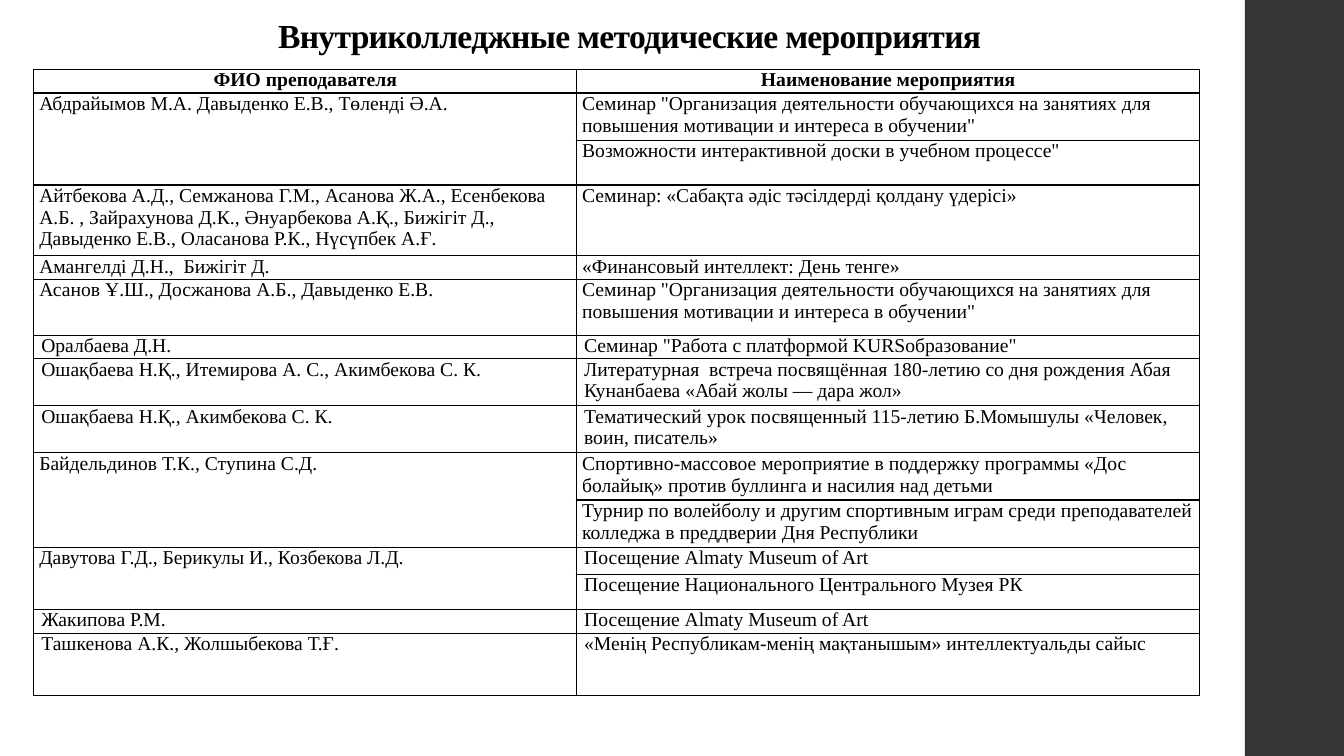
from typing import NamedTuple
from lxml import etree
from pptx import Presentation
from pptx import util as u
from pptx.dml.color import RGBColor
from pptx.enum import shapes, text
from pptx.oxml.ns import qn

HUES = {"ink": "000000", "paper": "FFFFFF", "bar": "353537"}
FACE = "Times New Roman"
SLIM, WIDE = 0.15, 0.2


class Row(NamedTuple):
    """One table row: height in cm, staff, event and left margins."""
    high: float
    staff: str
    event: str
    left: float = SLIM
    right: float = SLIM


ROWS = [
    Row(0.59, "ФИО преподавателя", "Наименование мероприятия"),
    Row(1.16, "Абдрайымов М.А. Давыденко Е.В., Төленді Ә.А.",
        "Семинар \"Организация деятельности обучающихся на занятиях для "
        "повышения мотивации и интереса в обучении\""),
    Row(1.13, "", "Возможности интерактивной доски в учебном процессе\""),
    Row(1.74, "Айтбекова А.Д., Семжанова Г.М., Асанова Ж.А., Есенбекова А.Б. , "
        "Зайрахунова Д.К., Әнуарбекова А.Қ., Бижігіт Д., Давыденко Е.В., "
        "Оласанова Р.К., Нүсүпбек А.Ғ.",
        "Семинар: «Сабақта әдіс тәсілдерді қолдану үдерісі»"),
    Row(0.59, "Амангелді Д.Н.,  Бижігіт Д.", "«Финансовый интеллект: День тенге»"),
    Row(1.41, "Асанов Ұ.Ш., Досжанова А.Б., Давыденко Е.В.",
        "Семинар \"Организация деятельности обучающихся на занятиях для "
        "повышения мотивации и интереса в обучении\""),
    Row(0.59, "Оралбаева Д.Н.", "Семинар \"Работа с платформой KURSобразование\"",
        WIDE, WIDE),
    Row(1.16, "Ошақбаева Н.Қ., Итемирова А. С., Акимбекова С. К.",
        "Литературная  встреча посвящённая 180-летию со дня рождения Абая "
        "Кунанбаева «Абай жолы — дара жол»", WIDE, WIDE),
    Row(1.16, "Ошақбаева Н.Қ., Акимбекова С. К.",
        "Тематический урок посвященный 115-летию Б.Момышулы «Человек, воин, "
        "писатель»", WIDE, WIDE),
    Row(1.16, "Байдельдинов Т.К., Ступина С.Д.",
        "Спортивно-массовое мероприятие в поддержку программы «Дос болайық» "
        "против буллинга и насилия над детьми"),
    Row(1.16, "", "Турнир по волейболу и другим спортивным играм среди "
        "преподавателей колледжа в преддверии Дня Республики"),
    Row(0.69, "Давутова Г.Д., Берикулы И., Козбекова Л.Д.",
        "Посещение Almaty Museum of Art", SLIM, WIDE),
    Row(0.88, "", "Посещение Национального Центрального Музея РК", SLIM, WIDE),
    Row(0.6, "Жакипова Р.М.", "Посещение Almaty Museum of Art", WIDE, WIDE),
    Row(1.57, "Ташкенова А.К., Жолшыбекова Т.Ғ.",
        "«Менің Республикам-менің мақтанышым» интеллектуальды сайыс", WIDE, WIDE),
]


def tint(name: str) -> RGBColor:
    """Return a named colour."""
    return RGBColor.from_string(HUES[name])


def style(para, size: float, bold: bool, mid: bool, gap: float) -> None:
    """Format a paragraph and its runs."""
    para.alignment = text.PP_ALIGN.CENTER if mid else text.PP_ALIGN.LEFT
    para.line_spacing = gap
    for run in para.runs:
        run.font.name = FACE
        run.font.size = u.Pt(size)
        run.font.bold = bold
        run.font.color.rgb = tint("ink")


def edge(cell) -> None:
    """Draw thin borders round a cell."""
    props = cell._tc.get_or_add_tcPr()
    for spot, side in enumerate(("a:lnL", "a:lnR", "a:lnT", "a:lnB")):
        line = etree.Element(qn(side), w=str(u.Pt(1)))
        fill = etree.SubElement(line, qn("a:solidFill"))
        etree.SubElement(fill, qn("a:srgbClr"), val=HUES["ink"])
        props.insert(spot, line)


def fill_cell(cell, words: str, inset: float, head: bool) -> None:
    """Write and format one cell."""
    cell.margin_left = u.Cm(inset)
    cell.margin_right = u.Cm(0.12)
    cell.margin_top = cell.margin_bottom = 0
    cell.fill.solid()
    cell.fill.fore_color.rgb = tint("paper")
    edge(cell)
    cell.text_frame.text = words
    para = cell.text_frame.paragraphs[0]
    style(para, 14, head, head, 1.0)
    para.space_after = u.Pt(8)


def add_grid(slide) -> None:
    """Build the table of events."""
    grid = slide.shapes.add_table(
        len(ROWS), 2, u.Cm(0.84), u.Cm(1.75), u.Cm(29.38),
        u.Cm(sum(row.high for row in ROWS))).table
    for col, wide in zip(grid.columns, (13.68, 15.7)):
        col.width = u.Cm(wide)
    for num, row in enumerate(ROWS):
        grid.rows[num].height = u.Cm(row.high)
        fill_cell(grid.cell(num, 0), row.staff, row.left, num == 0)
        fill_cell(grid.cell(num, 1), row.event, row.right, num == 0)
        if not row.staff:
            grid.cell(num - 1, 0).merge(grid.cell(num, 0))


def add_bar(slide) -> None:
    """Draw the dark band on the right."""
    bar = slide.shapes.add_shape(
        shapes.MSO_SHAPE.RECTANGLE, u.Cm(31.37), 0, u.Cm(2.5), u.Cm(19.05))
    bar.shadow.inherit = False
    bar.fill.solid()
    bar.fill.fore_color.rgb = tint("bar")
    bar.line.fill.background()


def add_title(slide) -> None:
    """Write the heading."""
    box = slide.shapes.add_textbox(u.Cm(1.5), u.Cm(0.3), u.Cm(28.73), u.Cm(1.22))
    frame = box.text_frame
    frame.word_wrap = True
    frame.vertical_anchor = text.MSO_ANCHOR.BOTTOM
    frame.text = "Внутриколледжные методические мероприятия"
    para = frame.paragraphs[0]
    style(para, 24, True, True, 0.9)
    para.runs[0].font._element.set("spc", "-50")


def main() -> None:
    """Build and save the slide."""
    deck = Presentation()
    deck.slide_width, deck.slide_height = u.Cm(33.87), u.Cm(19.05)
    slide = deck.slides.add_slide(deck.slide_layouts[6])
    slide.background.fill.solid()
    slide.background.fill.fore_color.rgb = tint("paper")
    add_bar(slide)
    add_title(slide)
    add_grid(slide)
    deck.save("out.pptx")


if __name__ == "__main__":
    main()
